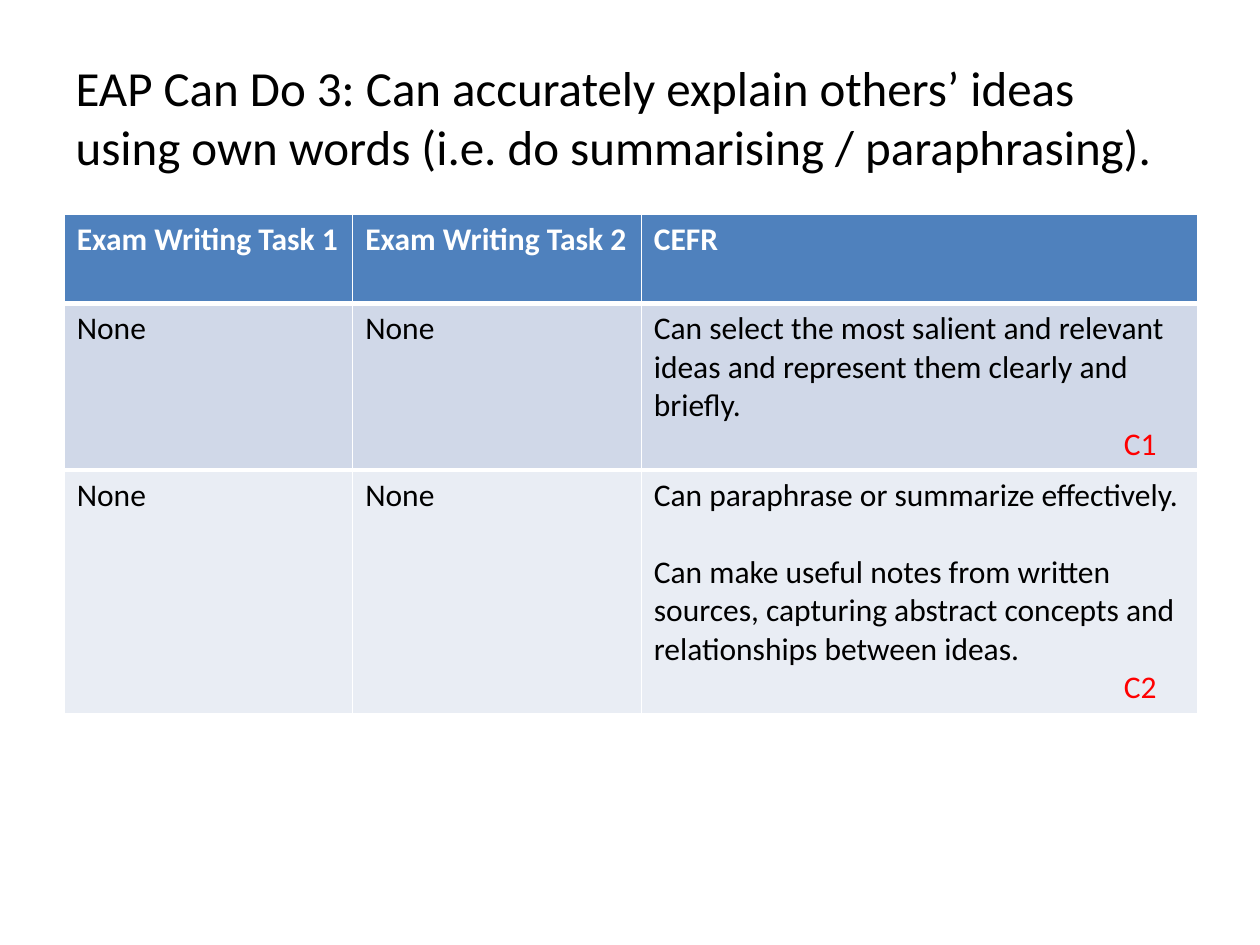
from dataclasses import dataclass

import lxml.etree
import pptx
import pptx.dml.color
import pptx.enum.text
import pptx.oxml.ns
import pptx.util

Inches = pptx.util.Inches
Pt = pptx.util.Pt
RGB = pptx.dml.color.RGBColor.from_string
qn = pptx.oxml.ns.qn


@dataclass(frozen=True)
class Theme:
    font: str = "Calibri"
    title_size: int = 28
    body_size: int = 18
    ink: str = "000000"
    header_ink: str = "FFFFFF"
    level_ink: str = "FF0000"
    header_fill: str = "4F81BD"
    rule: str = "FFFFFF"
    rule_width: int = 3
    band_fills: tuple[str, str] = ("D0D8E8", "E9EDF4")


@dataclass(frozen=True)
class Descriptor:
    task_1: str
    task_2: str
    cefr: tuple[str, ...]
    level: str
    height: float


THEME = Theme()
TITLE = (
    "EAP Can Do 3: Can accurately explain others’ ideas "
    "using own words (i.e. do summarising / paraphrasing)."
)
HEADERS = ("Exam Writing Task 1", "Exam Writing Task 2", "CEFR")
COLUMN_WIDTHS = (2.29, 2.29, 4.42)
HEADER_HEIGHT = 0.71
LEVEL_INDENT = 3.73
PARAGRAPH_GAP = 22
DESCRIPTORS = (
    Descriptor(
        "None",
        "None",
        (
            "Can select the most salient and relevant ideas "
            "and represent them clearly and briefly.",
        ),
        "C1",
        1.32,
    ),
    Descriptor(
        "None",
        "None",
        (
            "Can paraphrase or summarize effectively.",
            "Can make useful notes from written sources, capturing "
            "abstract concepts and relationships between ideas.",
        ),
        "C2",
        1.93,
    ),
)


def write(tf, text: str, *, size: int = THEME.body_size, color: str = THEME.ink,
          bold: bool = False, new: bool = False, gap: float = 0, indent: float = 0) -> None:
    p = tf.add_paragraph() if new else tf.paragraphs[0]
    p.alignment = pptx.enum.text.PP_ALIGN.LEFT
    if gap:
        p.space_before = Pt(gap)
    if indent:
        p._p.get_or_add_pPr().set("marL", str(Inches(indent)))
    r = p.add_run()
    r.text = text
    r.font.name = THEME.font
    r.font.size = Pt(size)
    r.font.bold = bold
    r.font.color.rgb = RGB(color)


def fill_cell(cell, color: str) -> None:
    cell.fill.solid()
    cell.fill.fore_color.rgb = RGB(color)


def rule_cell(cell, edge: str) -> None:
    ln = lxml.etree.Element(qn(f"a:{edge}"), w=str(Pt(THEME.rule_width)))
    fill = lxml.etree.SubElement(ln, qn("a:solidFill"))
    lxml.etree.SubElement(fill, qn("a:srgbClr"), val=THEME.rule)
    cell._tc.get_or_add_tcPr().insert(0, ln)


def draw_title(s) -> None:
    sp = s.shapes.title
    sp.left, sp.top = Inches(0.5), Inches(0.3)
    sp.width, sp.height = Inches(9), Inches(1.25)
    tf = sp.text_frame
    tf.word_wrap = True
    tf.vertical_anchor = pptx.enum.text.MSO_ANCHOR.MIDDLE
    write(tf, TITLE, size=THEME.title_size)


def draw_descriptor(table, row: int, item: Descriptor, fill: str) -> None:
    table.rows[row].height = Inches(item.height)
    cells = table.rows[row].cells
    for cell, texts in zip(cells, ((item.task_1,), (item.task_2,), item.cefr)):
        fill_cell(cell, fill)
        for i, text in enumerate(texts):
            write(cell.text_frame, text, new=i > 0, gap=PARAGRAPH_GAP if i else 0)
    write(cells[2].text_frame, item.level, color=THEME.level_ink,
          new=True, indent=LEVEL_INDENT)


def draw_table(s) -> None:
    height = HEADER_HEIGHT + sum(item.height for item in DESCRIPTORS)
    table = s.shapes.add_table(
        len(DESCRIPTORS) + 1, len(HEADERS),
        Inches(0.51), Inches(1.7), Inches(sum(COLUMN_WIDTHS)), Inches(height),
    ).table
    table.rows[0].height = Inches(HEADER_HEIGHT)
    for col, (text, width) in enumerate(zip(HEADERS, COLUMN_WIDTHS)):
        table.columns[col].width = Inches(width)
        cell = table.cell(0, col)
        fill_cell(cell, THEME.header_fill)
        rule_cell(cell, "lnB")
        rule_cell(table.cell(1, col), "lnT")
        write(cell.text_frame, text, color=THEME.header_ink, bold=True)
    for row, (item, fill) in enumerate(zip(DESCRIPTORS, THEME.band_fills), start=1):
        draw_descriptor(table, row, item, fill)


def main() -> None:
    prs = pptx.Presentation()
    prs.slide_width, prs.slide_height = Inches(10), Inches(7.5)
    s = prs.slides.add_slide(prs.slide_layouts[5])
    draw_title(s)
    draw_table(s)
    prs.save("out.pptx")


if __name__ == "__main__":
    main()
